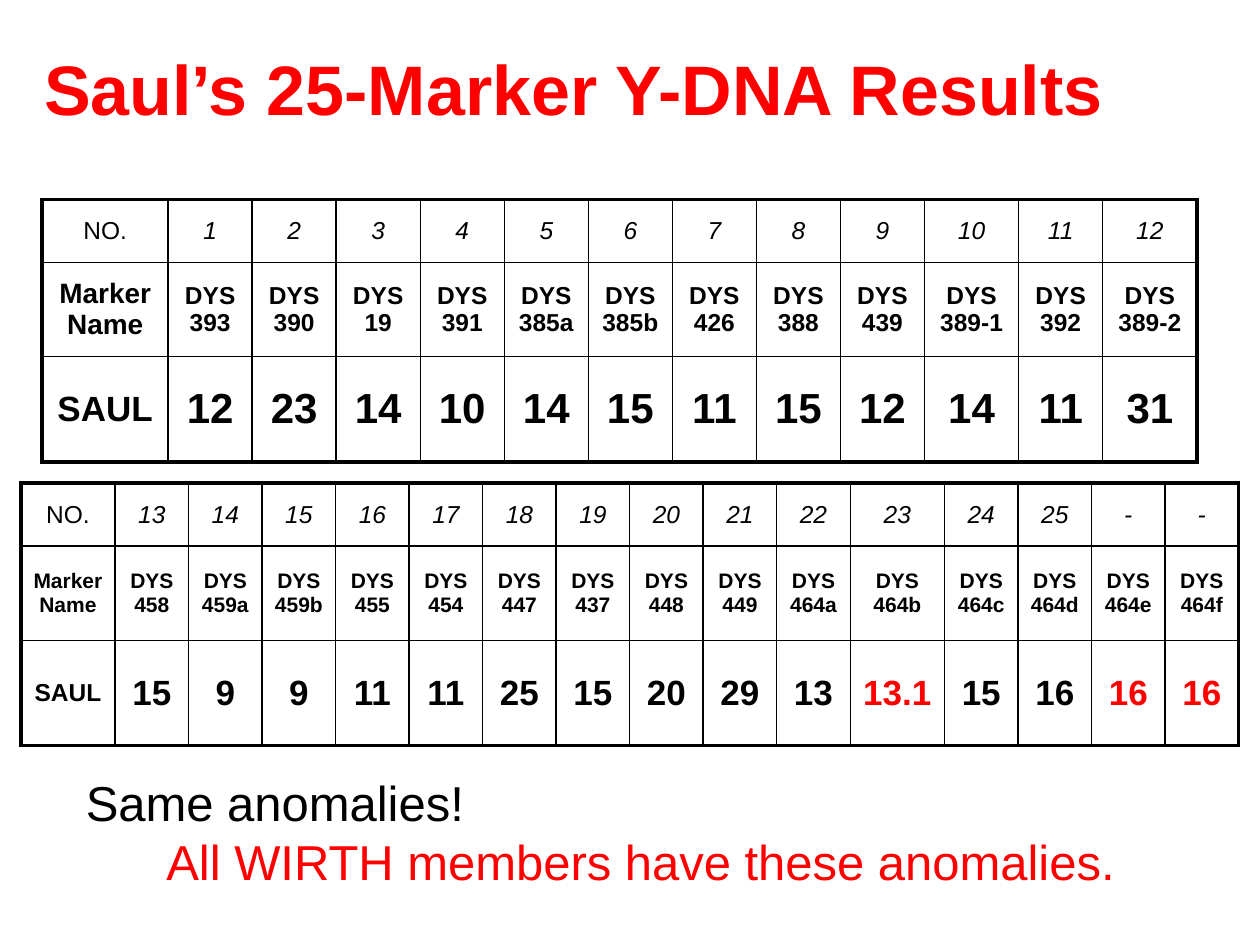
from collections import namedtuple
from dataclasses import dataclass

from lxml import etree
from pptx import Presentation
from pptx import util as u
from pptx.dml import color
from pptx.enum import text
from pptx.oxml import ns

Box = namedtuple("Box", "left top width height")
Style = namedtuple("Style", "size bold italic color", defaults=(False, False, "000000"))


@dataclass(frozen=True)
class Theme:
    """Colours, font, type sizes and line widths of the slide."""
    font: str = "Arial"
    ink: str = "000000"
    accent: str = "FF0000"
    title: int = 40
    remark: int = 28
    number: int = 14
    thin: float = 1
    thick: float = 2.25


@dataclass(frozen=True)
class Panel:
    """One block of markers with its results and type sizes."""
    numbers: list
    markers: list
    results: list
    wide_columns: dict
    marker_sizes: tuple
    result_sizes: tuple
    anomalies: tuple = ()


THEME = Theme()
ROW_HEIGHTS = (1.27, 1.9, 2.12)

FIRST_PANEL = Panel(
    numbers=[str(n) for n in range(1, 13)],
    markers="393 390 19 391 385a 385b 426 388 439 389-1 392 389-2".split(),
    results="12 23 14 10 14 15 11 15 12 14 11 31".split(),
    wide_columns={0: 2.54, 10: 1.9, 12: 1.9},
    marker_sizes=(16, 14),
    result_sizes=(20, 24),
)
SECOND_PANEL = Panel(
    numbers=[str(n) for n in range(13, 26)] + ["-", "-"],
    markers=("458 459a 459b 455 454 447 437 448 449 "
             "464a 464b 464c 464d 464e 464f").split(),
    results="15 9 9 11 11 25 15 20 29 13 13.1 15 16 16 16".split(),
    wide_columns={0: 1.9, 11: 1.9},
    marker_sizes=(12, 12),
    result_sizes=(14, 20),
    anomalies=(11, 14, 15),
)


def write(paragraph, wording, style):
    """Add the wording run by run, with a line break between its lines."""
    for index, line in enumerate(wording.split("\n")):
        if index:
            paragraph.add_line_break()
        run = paragraph.add_run()
        run.text = line
        run.font.name = THEME.font
        run.font.size = u.Pt(style.size)
        run.font.bold = style.bold
        run.font.italic = style.italic
        run.font.color.rgb = color.RGBColor.from_string(style.color)


def add_text_frame(slide, box):
    """Add a wrapping text box and return its text frame."""
    frame = slide.shapes.add_textbox(*map(u.Cm, box)).text_frame
    frame.word_wrap = True
    return frame


def add_title(slide, box):
    """Place the slide title, centred vertically in its box."""
    frame = add_text_frame(slide, box)
    frame.vertical_anchor = text.MSO_ANCHOR.MIDDLE
    write(frame.paragraphs[0], "Saul’s 25-Marker Y-DNA Results",
          Style(THEME.title, bold=True, color=THEME.accent))


def add_remark(slide, box):
    """Place the two closing lines about the anomalies."""
    frame = add_text_frame(slide, box)
    write(frame.paragraphs[0], "Same anomalies!", Style(THEME.remark, color=THEME.ink))
    members = frame.add_paragraph()
    members.alignment = text.PP_ALIGN.CENTER
    write(members, "All WIRTH members have these anomalies.",
          Style(THEME.remark, color=THEME.accent))


def set_borders(cell, outer_sides):
    """Draw the four cell borders, thick on the outer sides of the table."""
    properties = cell._tc.get_or_add_tcPr()
    for position, side in enumerate("LRTB"):
        width = THEME.thick if side in outer_sides else THEME.thin
        line = etree.Element(ns.qn(f"a:ln{side}"), w=str(u.Pt(width)))
        fill = etree.SubElement(line, ns.qn("a:solidFill"))
        etree.SubElement(fill, ns.qn("a:srgbClr"), val=THEME.ink)
        properties.insert(position, line)


def panel_rows(panel):
    """Return the rows of a panel as pairs of wording and style."""
    marker_label, marker = (Style(size, bold=True) for size in panel.marker_sizes)
    result_label, result = (Style(size, bold=True) for size in panel.result_sizes)
    anomaly = result._replace(color=THEME.accent)
    return [
        [("NO.", Style(THEME.number))]
        + [(number, Style(THEME.number, italic=True)) for number in panel.numbers],
        [("Marker\nName", marker_label)]
        + [(f"DYS\n{name}", marker) for name in panel.markers],
        [("SAUL", result_label)]
        + [(value, anomaly if column in panel.anomalies else result)
           for column, value in enumerate(panel.results, 1)],
    ]


def add_panel(slide, box, panel):
    """Place one marker table, sharing the spare width among normal columns."""
    rows = panel_rows(panel)
    last_row, last_column = len(rows) - 1, len(rows[0]) - 1
    table = slide.shapes.add_table(len(rows), len(rows[0]), *map(u.Cm, box)).table
    table.first_row = table.horz_banding = False

    wide = panel.wide_columns
    normal = (box.width - sum(wide.values())) / (len(rows[0]) - len(wide))
    for index, column in enumerate(table.columns):
        column.width = u.Cm(wide.get(index, normal))

    for r, row in enumerate(rows):
        table.rows[r].height = u.Cm(ROW_HEIGHTS[r])
        for c, (wording, style) in enumerate(row):
            cell = table.cell(r, c)
            cell.fill.background()
            cell.vertical_anchor = text.MSO_ANCHOR.MIDDLE
            cell.margin_left = cell.margin_right = u.Cm(0.23)
            edges = {"L": c == 0, "R": c == last_column, "T": r == 0, "B": r == last_row}
            set_borders(cell, [side for side, outer in edges.items() if outer])
            paragraph = cell.text_frame.paragraphs[0]
            paragraph.alignment = text.PP_ALIGN.CENTER
            write(paragraph, wording, style)


def main():
    """Build the slide and save it."""
    deck = Presentation()
    deck.slide_width, deck.slide_height = u.Cm(25.4), u.Cm(19.05)
    slide = deck.slides.add_slide(deck.slide_layouts[6])
    height = sum(ROW_HEIGHTS)
    add_title(slide, Box(0.64, 0.46, 22.76, 2.62))
    add_panel(slide, Box(0.85, 4.02, 23.28, height), FIRST_PANEL)
    add_panel(slide, Box(0.42, 9.74, 24.55, height), SECOND_PANEL)
    add_remark(slide, Box(1.48, 15.45, 22.86, 3.25))
    deck.save("out.pptx")


if __name__ == "__main__":
    main()
